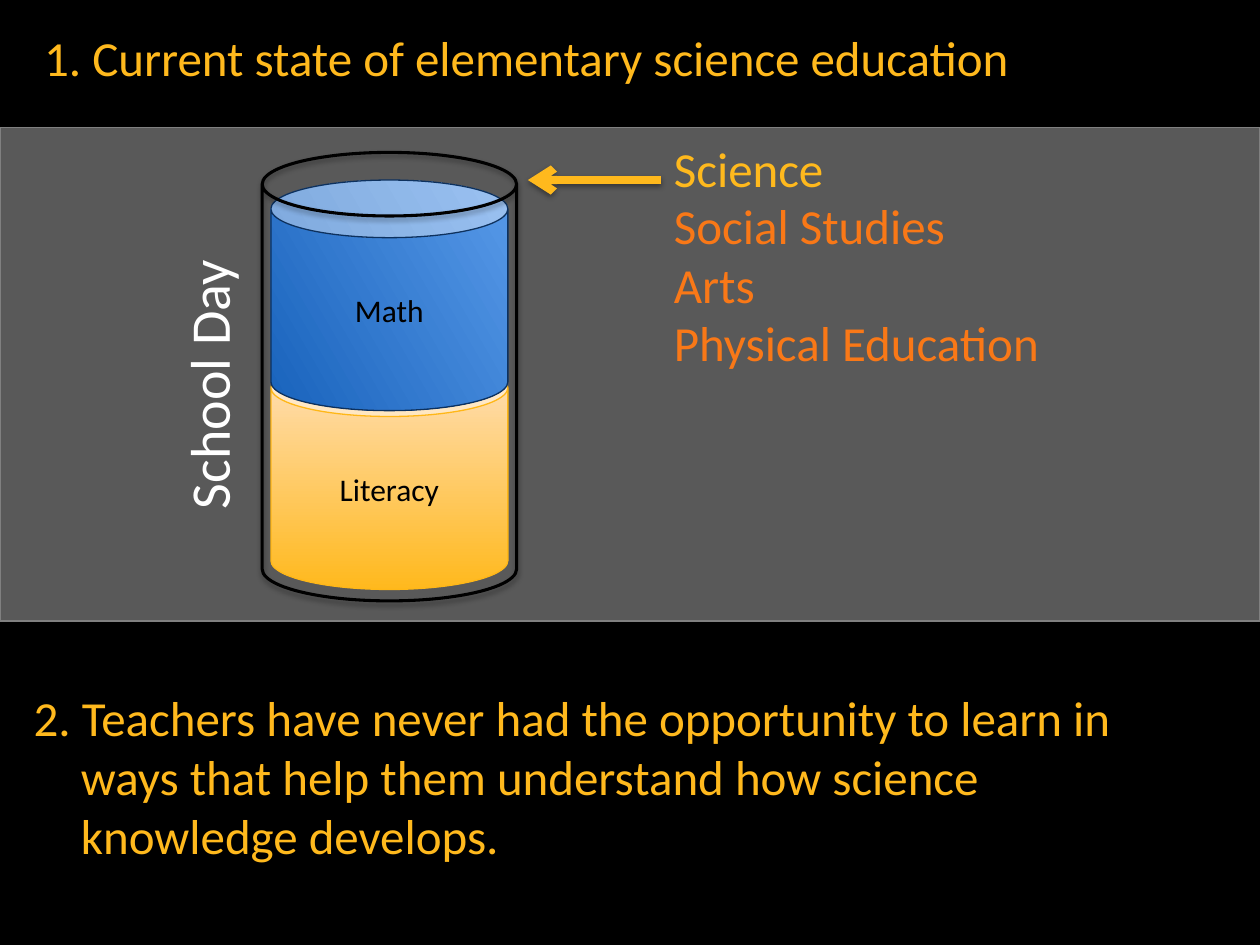
from lxml.etree import SubElement
from pptx import Presentation
from pptx.dml.color import RGBColor
from pptx.enum.shapes import MSO_CONNECTOR as CONN, MSO_SHAPE as SHAPE
from pptx.enum.text import MSO_ANCHOR, PP_ALIGN
from pptx.oxml.ns import qn
from pptx.util import Pt

FONT = "Calibri"
COLORS = {
    "background": "000000", "band": "595959", "band_line": "808080",
    "gold": "FFB91D", "cream": "FFE0BD", "gold_line": "FFB717",
    "blue": "1963BC", "sky": "5799E8", "navy": "0D315E",
    "orange": "F97817", "white": "FFFFFF", "black": "000000",
}


def rgb(name):
    return RGBColor.from_string(COLORS[name])


def points(*values):
    return [Pt(v) for v in values]


def style(p, size, color):
    p.font.name, p.font.size = FONT, Pt(size)
    p.font.color.rgb = rgb(color)


def add_shadow(shape, alpha, blur, dist):
    """Cast a black shadow straight down, replacing the theme's effect."""
    sp_pr = shape._element.spPr
    effects = sp_pr.find(qn("a:effectLst"))
    if effects is None:
        effects = SubElement(sp_pr, qn("a:effectLst"))
    shadow = SubElement(effects, qn("a:outerShdw"), blurRad=str(Pt(blur)),
                        dist=str(Pt(dist)), dir="5400000", rotWithShape="0")
    color = SubElement(shadow, qn("a:srgbClr"), val=COLORS["black"])
    SubElement(color, qn("a:alpha"), val=str(alpha * 1000))


def add_outlined(s, kind, box, line, width=0.75):
    sp = s.shapes.add_shape(kind, *points(*box))
    sp.shadow.inherit = False
    sp.line.color.rgb, sp.line.width = rgb(line), Pt(width)
    return sp


def add_text(s, box, lines, size, color):
    sp = s.shapes.add_textbox(*points(*box))
    tf = sp.text_frame
    tf.word_wrap = True
    tf.text = "\n".join(lines)
    for p in tf.paragraphs:
        style(p, size, color)
    return sp


def add_subject(s, box, name, start, end, angle, line):
    sp = add_outlined(s, SHAPE.CAN, box, line)
    sp.fill.gradient()
    sp.fill.gradient_angle = angle
    for stop, color in zip(sp.fill.gradient_stops, (start, end)):
        stop.color.rgb = rgb(color)
    for stop, position in zip(sp.fill.gradient_stops, (0, 1)):
        stop.position = position
    tf = sp.text_frame
    tf.vertical_anchor = MSO_ANCHOR.MIDDLE
    tf.text = name
    p = tf.paragraphs[0]
    p.alignment = PP_ALIGN.CENTER
    style(p, 18, "black")


def add_school_day(s, left, top, width, height):
    """Draw the jar of the school day with two subjects filling it."""
    inset, can_h = 5, 131.8
    can_w = width - 2 * inset
    add_subject(s, (left + inset, top + 118, can_w, can_h), "Literacy",
                "gold", "cream", 90, "gold_line")
    add_subject(s, (left + inset, top + 15.8, can_w, can_h), "Math",
                "blue", "sky", 30, "navy")
    jar = add_outlined(s, SHAPE.CAN, (left, top, width, height), "black", 1.75)
    jar.fill.background()
    add_shadow(jar, 35, 3.1, 1.8)
    label = add_text(s, (left - 123.9, top + 95, 185.8, 46),
                     ["School Day"], 32, "white")
    label.rotation = 270


def add_left_out(s, left, top, width, height):
    """List the subjects left outside, with an arrow from the first to the jar."""
    add_text(s, (left, top, 180, 41), ["Science"], 28, "gold")
    add_text(s, (left, top + 32.4, width, height - 32.4),
             ["Social Studies", "Arts", "Physical Education"], 28, "orange")
    y = top + 27.3
    arrow = s.shapes.add_connector(CONN.CURVE, *points(left, y, left - 76.3, y))
    arrow.line.color.rgb, arrow.line.width = rgb("gold"), Pt(4.75)
    SubElement(arrow.line._get_or_add_ln(), qn("a:tailEnd"), type="arrow")
    add_shadow(arrow, 38, 3.1, 1.6)


def add_band(s, left, top, width, height):
    band = add_outlined(s, SHAPE.RECTANGLE, (left, top, width, height), "band_line")
    band.fill.solid()
    band.fill.fore_color.rgb = rgb("band")
    add_school_day(s, left + 149.8, top + 14.4, 145.4, 256.3)
    add_left_out(s, left + 378, top + 2.9, 234, 141.1)


def format_point(sp):
    """Give a numbered statement its hanging indent and look."""
    p = sp.text_frame.paragraphs[0]
    style(p, 28, "gold")
    p.space_before = Pt(5.6)
    p_pr = p._p.get_or_add_pPr()
    p_pr.set("marL", str(Pt(27)))
    p_pr.set("indent", str(Pt(-27)))
    SubElement(p_pr, qn("a:buNone")) if p_pr.find(qn("a:defRPr")) is None else \
        p_pr.find(qn("a:defRPr")).addprevious(SubElement(p_pr, qn("a:buNone")))


def add_points(s):
    body = s.placeholders[1]
    body.left, body.top, body.width, body.height = points(18, 12.2, 652.3, 108)
    body.text_frame.text = "1. Current state of elementary science education"
    format_point(body)
    format_point(add_text(s, (12.2, 389.5, 652.3, 108), [
        "2. Teachers have never had the opportunity to learn in ways that "
        "help them understand how science knowledge develops."], 28, "gold"))


def main():
    prs = Presentation()
    prs.slide_width, prs.slide_height = points(720, 540)
    s = prs.slides.add_slide(prs.slide_layouts[1])
    s.background.fill.solid()
    s.background.fill.fore_color.rgb = rgb("background")
    title = s.shapes.title._element
    title.getparent().remove(title)
    add_band(s, 0, 72.7, 720, 282.2)
    add_points(s)
    prs.save("out.pptx")


if __name__ == "__main__":
    main()
